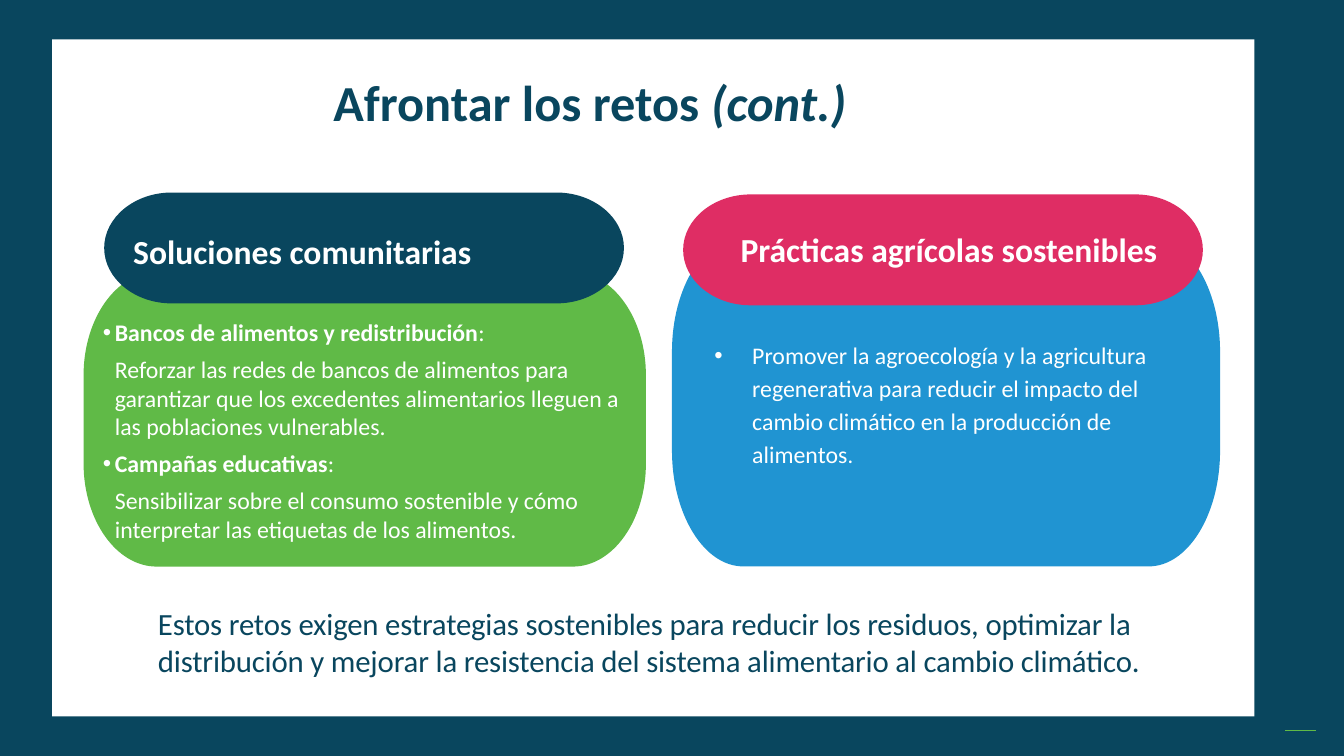
from lxml.etree import SubElement
from pptx import Presentation
from pptx.dml.color import RGBColor
from pptx.enum.shapes import MSO_CONNECTOR as Link, MSO_SHAPE as Shape
from pptx.enum.text import MSO_ANCHOR as Anchor, MSO_AUTO_SIZE as Fit, PP_ALIGN as Align
from pptx.oxml.ns import qn
from pptx.util import Emu, Pt

NAVY = RGBColor(0x09, 0x46, 0x5E)
GREEN = RGBColor(0x60, 0xBA, 0x47)
BLUE = RGBColor(0x20, 0x94, 0xD2)
PINK = RGBColor(0xDF, 0x2D, 0x64)
WHITE = RGBColor(0xFF, 0xFF, 0xFF)

# Square grid of 64 columns by 36 rows
COLS, ROWS = 64, 36
CELL = 190500
ARC = 0.45  # distance from a corner to its curve handles, as a share of the radius


def cells(*nums):
    return [Emu(round(n * CELL)) for n in nums]


def shift(box, dx, dy, width, height):
    """Box placed at an offset from the corner of another box."""
    return box[0] + dx, box[1] + dy, width, height


def paint(shape, fill):
    shape.fill.solid()
    shape.fill.fore_color.rgb = fill
    shape.line.fill.background()
    shape.shadow.inherit = False


def setup(frame):
    frame.word_wrap = True
    frame.auto_size = Fit.NONE
    frame.vertical_anchor = Anchor.TOP
    return frame


def move(holder, box):
    """Place a template placeholder in front of the shapes drawn so far."""
    holder.left, holder.top, holder.width, holder.height = cells(*box)
    tree = holder.element.getparent()
    tree.append(holder.element)
    return setup(holder.text_frame)


def text_box(slide, box):
    return setup(slide.shapes.add_textbox(*cells(*box)).text_frame)


def write(frame, text, tail="", size=17, color=WHITE, bold=False, slant=False,
          tail_bold=False, tail_size=None, line=1.0, after=0, bullet=False,
          left=0, hang=0, track=0):
    """Add a paragraph; the tail is a second run, italic if slant is set."""
    para = frame.paragraphs[0]
    if para.runs:
        para = frame.add_paragraph()
    props = para._p.get_or_add_pPr()
    props.set("marL", str(round(left * CELL)))
    props.set("indent", str(round(-hang * CELL)))
    if bullet:
        SubElement(props, qn("a:buFont")).set("typeface", "Arial")
        SubElement(props, qn("a:buChar")).set("char", "•")
    else:
        SubElement(props, qn("a:buNone"))
    para.alignment = Align.LEFT
    para.line_spacing = line
    para.space_before, para.space_after = Pt(0), Pt(after)
    for words, heavy, lean, points in ((text, bold, False, size),
                                       (tail, tail_bold, slant, tail_size or size)):
        if words:
            run = para.add_run()
            run.text = words
            font = run.font
            font.name, font.size = "Calibri", Pt(points)
            font.bold, font.italic = heavy, lean
            font.color.rgb = color
            if track:
                run._r.get_or_add_rPr().set("spc", str(track))


def pill(slide, box, fill, share_x, share_y):
    """Rectangle with elliptical corners, sized as shares of its box."""
    x, y, width, height = box
    rx, ry = width * share_x, height * share_y
    points = []
    for i, (cx, cy, sx, sy) in enumerate((
            (x + width, y + height, -1, -1), (x, y + height, 1, -1),
            (x, y, 1, 1), (x + width, y, -1, 1))):
        side = [(cx, cy + sy * ry), (cx, cy + sy * ry * ARC),
                (cx + sx * rx * ARC, cy), (cx + sx * rx, cy)]
        points += side if i % 2 == 0 else side[::-1]
    points = [cells(*point) for point in points]
    path = slide.shapes.build_freeform(*points[0])
    path.add_line_segments(points[1:], close=True)
    shape = path.convert_to_shape()
    # Turn the three points that follow each side into one curve
    lines = list(shape._element.iter(qn("a:lnTo")))
    for k in range(0, len(lines), 4):
        curve = SubElement(lines[k].getparent(), qn("a:cubicBezTo"))
        lines[k].addprevious(curve)
        for step in lines[k:k + 3]:
            curve.append(step[0])
            step.getparent().remove(step)
    paint(shape, fill)


def frame_page(slide):
    """Navy border, white page and the small green rule."""
    for box, fill in (((0, 0, COLS, ROWS), NAVY), ((2.48, 1.88, 57.26, 32.24), WHITE)):
        paint(slide.shapes.add_shape(Shape.RECTANGLE, *cells(*box)), fill)
    rule = slide.shapes.add_connector(Link.STRAIGHT, *cells(61.2, 34.8, 62.68, 34.8))
    rule.line.color.rgb, rule.line.width = GREEN, Pt(1)
    SubElement(rule._element.spPr, qn("a:effectLst"))


def card(slide, box, fill, tab, tab_fill, head, head_at, body, body_at):
    """Panel with a heading tab; returns the frame of its list."""
    tab_box = shift(box, *tab, 24.75, 5.28)
    pill(slide, box, fill, 0.13, 0.35)
    pill(slide, tab_box, tab_fill, 0.13, 0.5)
    label = text_box(slide, shift(tab_box, *head_at, 22.6, 2.6))
    write(label, head, size=24, bold=True, line=1.15, after=8)
    return move(body, shift(box, *body_at))


def farming(slide, box, body):
    items = card(slide, box, BLUE, (0.53, -1.97), PINK, "Prácticas agrícolas sostenibles",
                 (2.26, 1.1), body, (1.54, 4.56, 21.7, 6.72))
    write(items, "Promover la agroecología y la agricultura regenerativa para reducir "
          "el impacto del cambio climático en la producción de alimentos", ".",
          tail_size=16, line=1.15, after=8, bullet=True, left=1.8, hang=1.8)


def community(slide, box, body):
    items = card(slide, box, GREEN, (0.98, -3.79), NAVY, "Soluciones comunitarias",
                 (0.91, 1.3), body, (0.44, 1.93, 25.78, 11.33))
    for name, detail in (
        ("Bancos de alimentos y redistribución",
         "Reforzar las redes de bancos de alimentos para garantizar que los excedentes "
         "alimentarios lleguen a las poblaciones vulnerables."),
        ("Campañas educativas",
         "Sensibilizar sobre el consumo sostenible y cómo interpretar las etiquetas "
         "de los alimentos."),
    ):
        write(items, name, ":", bold=True, after=6, bullet=True, left=0.57, hang=0.57)
        write(items, detail, after=6, left=0.57)


def closing(slide, box):
    write(text_box(slide, box),
          "Estos retos exigen estrategias sostenibles para reducir los residuos, optimizar "
          "la distribución y mejorar la resistencia del sistema alimentario al cambio climático.",
          size=22, color=NAVY, track=-10)


def main():
    deck = Presentation()
    deck.slide_width, deck.slide_height = cells(COLS, ROWS)
    slide = deck.slides.add_slide(deck.slide_layouts[3])
    title, first, second = slide.placeholders
    frame_page(slide)
    farming(slide, (32, 11.23, 26.1, 15.74), second)
    community(slide, (3.98, 12.96, 26.78, 14.02), first)
    write(move(title, (15.4, 2.71, 38.1, 5.28)), "Afrontar los retos ", "(cont.)", size=36,
          color=NAVY, bold=True, tail_bold=True, slant=True, line=1.15, after=8)
    closing(slide, (7.05, 28.56, 53.14, 5.81))
    deck.save("out.pptx")


if __name__ == "__main__":
    main()
